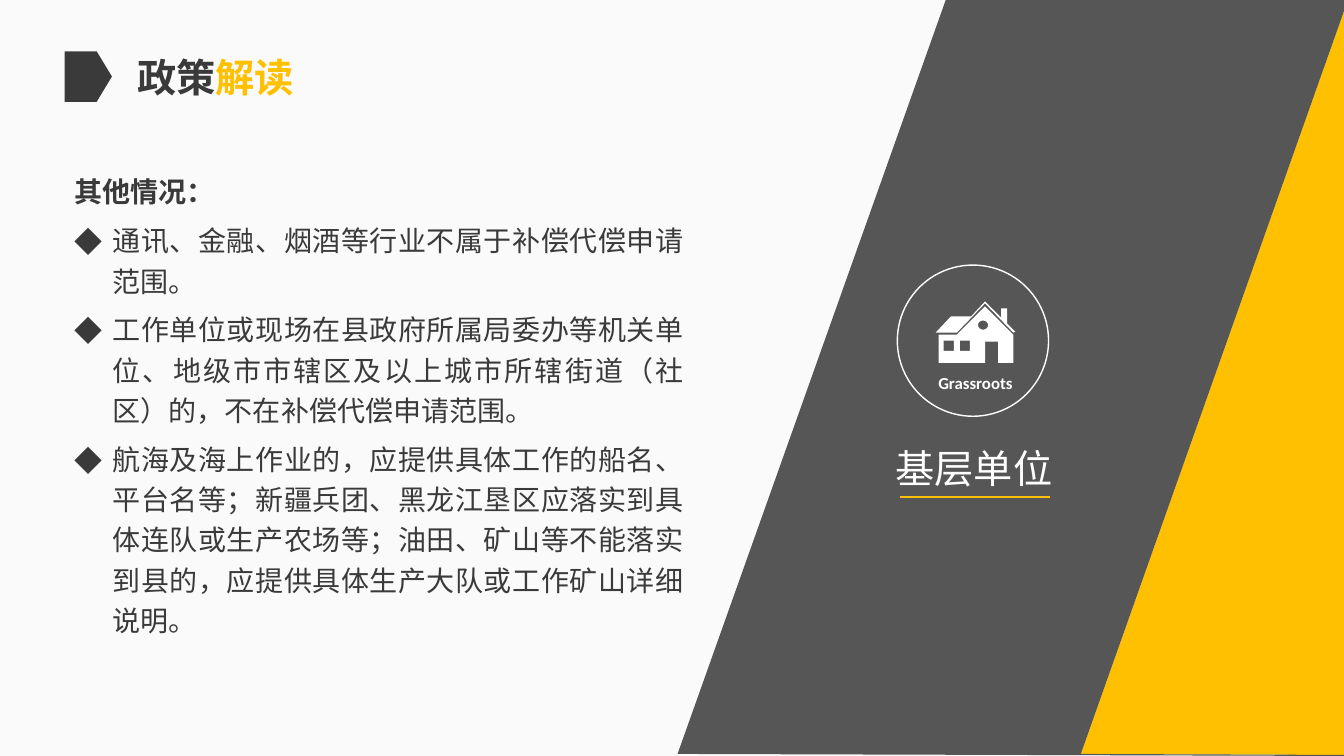
"""Build the policy slide: a bulleted list beside slanted bands with a house badge."""
from math import cos, pi, sin
from lxml import etree
from pptx import Presentation, util as u
from pptx.dml.color import RGBColor
from pptx.enum import shapes as sh, text as tx
from pptx.oxml.ns import qn

COLS, ROWS = 1333, 750
CELL = u.Inches(0.01)
HUES = {"back": "FAFAFA", "gray": "565656", "ink": "3A3A3A",
        "gold": "FFC001", "amber": "FFC000", "white": "FFFFFF"}
HAN = "Noto Sans CJK SC"
LEFT, MID, JUST = tx.PP_ALIGN.LEFT, tx.PP_ALIGN.CENTER, tx.PP_ALIGN.JUSTIFY

BANDS = [
    ("gold", [(COLS, 11), (COLS, 749), (1072, 748)]),
    ("gray", [(938, 0), (COLS, 0), (COLS, 11), (1072, 748),
              (COLS, 749), (COLS, ROWS), (672, 748)]),
]
WALLS = [(1005, 332), (977, 304), (949, 332), (931, 332), (931, 360),
         (977, 360), (977, 339), (990, 339), (990, 360), (1005, 360)]
ROOF = [(1007, 329), (1005, 330), (977, 301), (949, 330), (928, 330),
        (943, 314), (963, 314), (977, 299), (993, 315), (993, 306),
        (999, 306), (999, 321)]
PANES = [[(x, 338), (x + 10, 338), (x + 10, 348), (x, 348)] for x in (936, 952)]
TURNS = [2 * pi * i / 24 for i in range(24)]
ATTIC = [(975 + 5 * cos(t), 322.5 + 4.5 * sin(t)) for t in TURNS]

TITLE = [("政策", "ink"), ("解读", "amber")]
HEAD = "其他情况："
ITEMS = [
    "通讯、金融、烟酒等行业不属于补偿代偿申请范围。",
    "工作单位或现场在县政府所属局委办等机关单位、地级市市辖区及以上城市所辖街道（社区）的，不在补偿代偿申请范围。",
    "航海及海上作业的，应提供具体工作的船名、平台名等；新疆兵团、黑龙江垦区应落实到具体连队或生产农场等；"
    "油田、矿山等不能落实到县的，应提供具体生产大队或工作矿山详细说明。",
]
BODY = {"alignment": JUST, "line_spacing": 1.2, "space_after": u.Pt(6)}
TEXTS = [
    ((825, 436, 282, 57), HAN, 28, False, {"alignment": MID}, [[("基层单位", "white")]]),
    ((64, 48, 300, 57), HAN, 28, True, {"alignment": MID}, [TITLE]),
    ((64, 162, 624, 474), HAN, 20, True, BODY,
     [[(HEAD, "ink")]] + [[(item, "ink")] for item in ITEMS]),
    ((917, 365, 101, 30), "Calibri", 12, True, {"alignment": MID}, [[("Grassroots", "white")]]),
]

deck = Presentation()
deck.slide_width, deck.slide_height = COLS * CELL, ROWS * CELL
page = deck.slides.add_slide(deck.slide_layouts[6])
tree = page.shapes


def grid(*cells):
    return [round(c * CELL) for c in cells]


def tint(fill, hue):
    fill.solid()
    fill.fore_color.rgb = RGBColor.from_string(HUES[hue])


def dress(shape, fill=None, line=None):
    shape.shadow.inherit = False
    for part, hue in ((shape.fill, fill), (shape.line.fill, line)):
        if hue:
            tint(part, hue)
        else:
            part.background()


def trace(loops, hue):
    pen = None
    for loop in loops:
        first, *rest = [grid(*spot) for spot in loop]
        if pen is None:
            pen = tree.build_freeform(*first)
        else:
            pen.move_to(*first)
        pen.add_line_segments(rest, close=True)
    dress(pen.convert_to_shape(), hue)


def mark(para):
    props = para._p.get_or_add_pPr()
    props.set("marL", str(u.Inches(0.38)))
    props.set("indent", str(-u.Inches(0.38)))
    etree.SubElement(props, qn("a:buFont")).set("typeface", HAN)
    etree.SubElement(props, qn("a:buChar")).set("char", "◆")


def write(box, face, size, bold, look, lines):
    frame = tree.add_textbox(*grid(*box)).text_frame
    frame.word_wrap = True
    frame.auto_size = tx.MSO_AUTO_SIZE.SHAPE_TO_FIT_TEXT
    for row, line in enumerate(lines):
        para = frame.add_paragraph() if row else frame.paragraphs[0]
        for name, value in look.items():
            setattr(para, name, value)
        if row:
            mark(para)
        for words, hue in line:
            run = para.add_run()
            run.text = words
            font = {"name": face, "size": u.Pt(size), "bold": bold and not row}
            for name, value in font.items():
                setattr(run.font, name, value)
            tint(run.font.fill, hue)
            etree.SubElement(run._r.get_or_add_rPr(), qn("a:ea")).set("typeface", face)


tint(page.background.fill, "back")
for hue, loop in BANDS:
    trace([loop], hue)

ring = tree.add_shape(sh.MSO_SHAPE.OVAL, *grid(890, 263, 150, 150))
dress(ring, line="white")
ring.line.width = u.Pt(1)

rule = tree.add_connector(sh.MSO_CONNECTOR.STRAIGHT, *grid(893, 493, 1041, 493))
tint(rule.line.fill, "amber")
rule.line.width = u.Pt(1.75)
etree.SubElement(rule._element.spPr, qn("a:effectLst"))

tag = tree.add_shape(sh.MSO_SHAPE.PENTAGON, *grid(64, 51, 47, 50))
tag.adjustments[0] = 0.32
dress(tag, "ink")

for item in TEXTS:
    write(*item)
trace([WALLS, *PANES, ATTIC, ROOF], "white")

deck.save("out.pptx")
